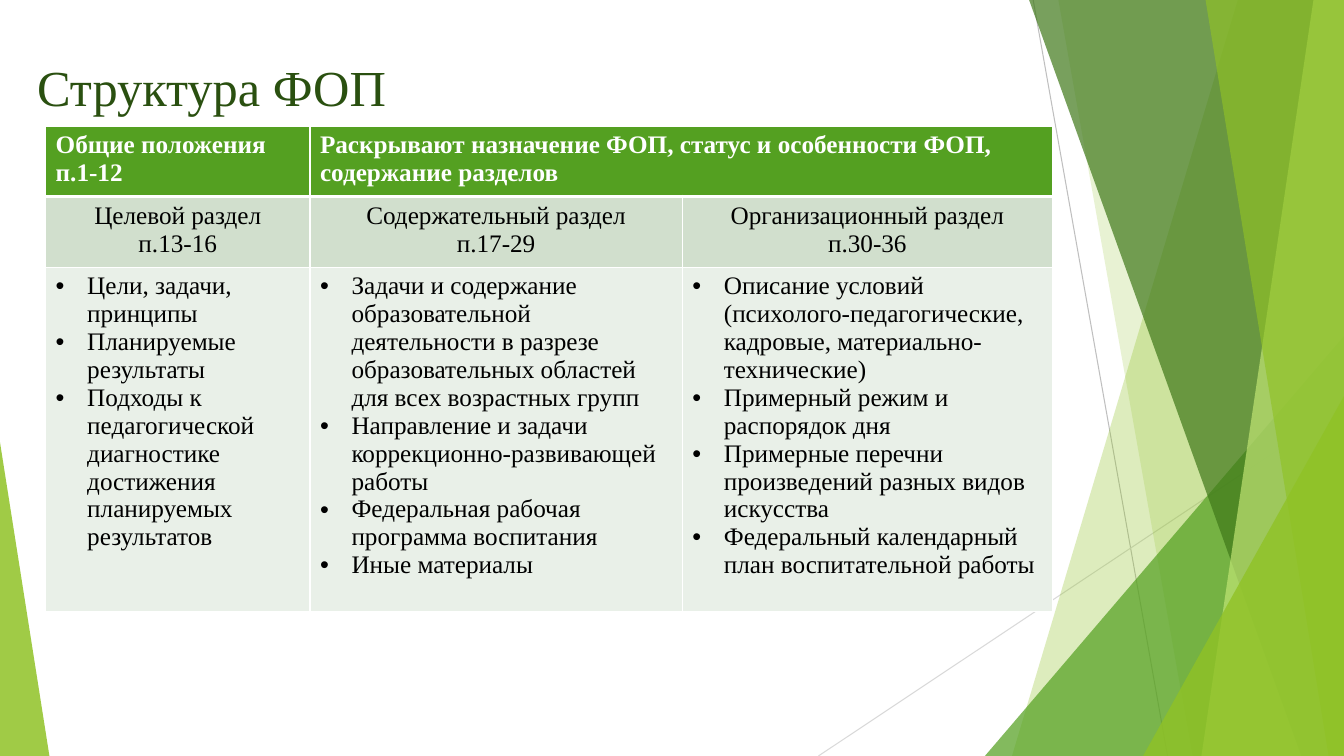
from lxml.etree import SubElement
from pptx import Presentation
from pptx.dml.color import RGBColor
from pptx.enum.shapes import MSO_CONNECTOR, MSO_SHAPE
from pptx.enum.text import MSO_ANCHOR, PP_ALIGN
from pptx.oxml.ns import qn
from pptx.util import Pt

COLORS = {
    "white": "FFFFFF", "black": "000000", "title": "2A5010",
    "head": "54A021", "section": "D1DFCD", "body": "E9F0E8",
    "lime": "90C226", "dark": "3F7819", "pale": "C0E474",
    "gray": "BFBFBF", "light": "D9D9D9",
}
FONT = "Times New Roman"
WIDTH, HEIGHT = 960, 540

HEADS = [
    "Общие положения п.1-12",
    "Раскрывают назначение ФОП, статус и особенности ФОП, содержание разделов",
]
SECTIONS = [
    ["Целевой раздел", "п.13-16"],
    ["Содержательный раздел", "п.17-29"],
    ["Организационный раздел", "п.30-36"],
]
TOPICS = [
    [
        "Цели, задачи, принципы",
        "Планируемые результаты",
        "Подходы к педагогической диагностике достижения планируемых результатов",
    ],
    [
        "Задачи и содержание образовательной деятельности в разрезе "
        "образовательных областей для всех возрастных групп",
        "Направление и задачи коррекционно-развивающей работы",
        "Федеральная рабочая программа воспитания",
        "Иные материалы",
    ],
    [
        "Описание условий (психолого-педагогические, кадровые, "
        "материально-технические)",
        "Примерный режим и распорядок дня",
        "Примерные перечни произведений разных видов искусства",
        "Федеральный календарный план воспитательной работы",
    ],
]


def rgb(name):
    return RGBColor.from_string(COLORS[name])


def add_bullet(para):
    props = para._p.get_or_add_pPr()
    props.set("marL", str(Pt(22.5)))
    props.set("indent", str(-Pt(22.5)))
    SubElement(props, qn("a:buFont"), typeface="Arial")
    SubElement(props, qn("a:buChar"), char="•")


def put_text(frame, lines, size=18, color="black", bold=False,
             align=PP_ALIGN.LEFT, bullet=False):
    frame.word_wrap = True
    for i, line in enumerate(lines):
        para = frame.paragraphs[0] if i == 0 else frame.add_paragraph()
        para.alignment = align
        if bullet:
            add_bullet(para)
        run = para.add_run()
        run.text = line
        font = run.font
        font.name, font.size, font.bold = FONT, Pt(size), bold
        font.color.rgb = rgb(color)


def add_line(slide, start, end, color):
    line = slide.shapes.add_connector(
        MSO_CONNECTOR.STRAIGHT, *map(Pt, start + end))
    line.line.color.rgb = rgb(color)
    line.line.width = Pt(0.75)
    SubElement(line._element.spPr, qn("a:effectLst"))


def paint(shape, color, alpha):
    """Give a flat, partly clear fill with no outline; alpha is in percent."""
    shape.shadow.inherit = False
    shape.fill.solid()
    shape.fill.fore_color.rgb = rgb(color)
    shape.line.fill.background()
    tone = shape._element.spPr.find(qn("a:solidFill"))[0]
    SubElement(tone, qn("a:alpha"), val=str(alpha * 1000))


def add_band(slide, top, bottom, color, alpha):
    """Fill from a slanted left side to the right edge of the slide."""
    form = slide.shapes.build_freeform(Pt(top), 0)
    form.add_line_segments([
        (Pt(WIDTH), 0), (Pt(WIDTH), Pt(HEIGHT)), (Pt(bottom), Pt(HEIGHT))])
    paint(form.convert_to_shape(), color, alpha)


def add_wedge(slide, left, top, width, tip, color, alpha):
    """Stand a right triangle on the slide's bottom; tip is 0 left, 1 right."""
    wedge = slide.shapes.add_shape(
        MSO_SHAPE.ISOSCELES_TRIANGLE,
        Pt(left), Pt(top), Pt(width), Pt(HEIGHT - top))
    wedge.adjustments[0] = tip
    paint(wedge, color, alpha)


def add_border(cell, base):
    props = cell._tc.get_or_add_tcPr()
    for side, width in zip("LRTB", (1, 1, 1, base)):
        edge = SubElement(props, qn(f"a:ln{side}"), w=str(Pt(width)))
        fill = SubElement(edge, qn("a:solidFill"))
        SubElement(fill, qn("a:srgbClr"), val=COLORS["white"])


def add_grid(slide):
    widths, heights = (188.8, 266, 264.4), (47, 47, 246)
    grid = slide.shapes.add_table(
        3, 3, Pt(32.6), Pt(90), Pt(sum(widths)), Pt(sum(heights))).table
    for col, width in zip(grid.columns, widths):
        col.width = Pt(width)
    for row, height in zip(grid.rows, heights):
        row.height = Pt(height)
    for r, color in enumerate(("head", "section", "body")):
        for cell in grid.rows[r].cells:
            add_border(cell, 3 if r == 0 else 1)
            cell.fill.solid()
            cell.fill.fore_color.rgb = rgb(color)
    grid.cell(0, 1).merge(grid.cell(0, 2))
    for c, head in enumerate(HEADS):
        put_text(grid.cell(0, c).text_frame, [head], color="white", bold=True)
    for c, (section, topics) in enumerate(zip(SECTIONS, TOPICS)):
        put_text(grid.cell(1, c).text_frame, section, align=PP_ALIGN.CENTER)
        put_text(grid.cell(2, c).text_frame, topics, bullet=True)


def add_decor(slide):
    add_line(slide, (738, 0), (834, HEIGHT), "gray")
    add_line(slide, (WIDTH, 290), (584.6, HEIGHT), "light")
    add_band(slide, 884.2, 722.9, "lime", 30)
    add_band(slide, 756, 851.8, "lime", 20)
    add_wedge(slide, 703.5, 240, 256.5, 1, "head", 72)
    add_band(slide, 735.1, 929.5, "dark", 70)
    add_band(slide, 938.2, 858.2, "pale", 70)
    add_band(slide, 861.1, 949, "lime", 65)
    add_wedge(slide, 816.5, 283, 143.5, 1, "lime", 80)
    add_wedge(slide, 0, 316, 35.3, 0, "lime", 85)


def add_title(slide):
    box = slide.shapes.add_textbox(Pt(19.4), Pt(32.4), Pt(676.8), Pt(67))
    frame = box.text_frame
    frame.vertical_anchor = MSO_ANCHOR.TOP
    frame.margin_top = Pt(8)
    put_text(frame, ["Структура ФОП"], size=36, color="title")


def main():
    deck = Presentation()
    deck.slide_width, deck.slide_height = Pt(WIDTH), Pt(HEIGHT)
    slide = deck.slides.add_slide(deck.slide_layouts[6])
    add_decor(slide)
    add_title(slide)
    add_grid(slide)
    deck.save("out.pptx")


if __name__ == "__main__":
    main()
